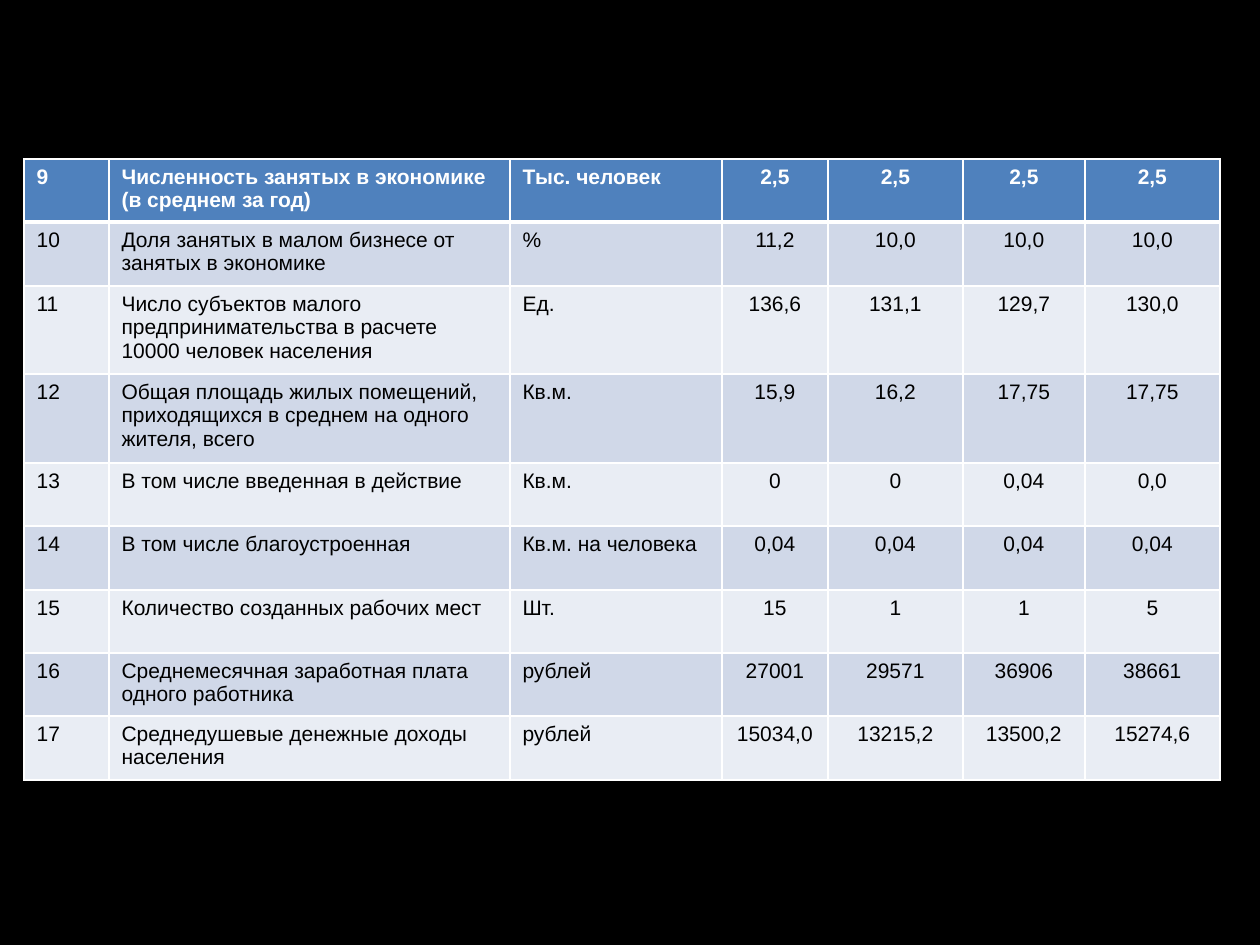
from dataclasses import dataclass

from lxml.etree import SubElement
from pptx import Presentation
from pptx.dml.color import RGBColor
from pptx.enum.text import PP_ALIGN as Align
from pptx.oxml.ns import qn
from pptx.util import Emu, Pt

SCALE = 914400 / 126
COLUMN_WIDTHS = [85, 401, 212, 106, 135, 122, 135]
ROW_HEIGHTS = [63, 64, 88, 89, 63, 64, 63, 63, 64]
FIRST_NUMBER = 9
FIRST_VALUE_COLUMN = 3


@dataclass
class Indicator:
    name: str
    unit: str
    values: tuple[str, ...]


@dataclass
class RowStyle:
    fill: str
    text: str
    bold: bool
    top: int
    bottom: int


INDICATORS = [
    Indicator("Численность занятых в экономике (в среднем за год)", "Тыс. человек",
              ("2,5", "2,5", "2,5", "2,5")),
    Indicator("Доля занятых в малом бизнесе от занятых в экономике", "%",
              ("11,2", "10,0", "10,0", "10,0")),
    Indicator("Число субъектов малого предпринимательства в расчете 10000 человек населения",
              "Ед.", ("136,6", "131,1", "129,7", "130,0")),
    Indicator("Общая площадь жилых помещений, приходящихся в среднем на одного жителя, всего",
              "Кв.м.", ("15,9", "16,2", "17,75", "17,75")),
    Indicator("В том числе введенная в действие", "Кв.м.", ("0", "0", "0,04", "0,0")),
    Indicator("В том числе благоустроенная", "Кв.м. на человека",
              ("0,04", "0,04", "0,04", "0,04")),
    Indicator("Количество созданных рабочих мест", "Шт.", ("15", "1", "1", "5")),
    Indicator("Среднемесячная заработная плата одного работника", "рублей",
              ("27001", "29571", "36906", "38661")),
    Indicator("Среднедушевые денежные доходы населения", "рублей",
              ("15034,0", "13215,2", "13500,2", "15274,6")),
]


def px(length: int) -> Emu:
    return Emu(round(length * SCALE))


def color(value: str) -> RGBColor:
    return RGBColor.from_string(value)


def row_style(row: int) -> RowStyle:
    if row == 0:
        return RowStyle("4F81BD", "FFFFFF", True, 1, 3)
    fill = "D0D8E8" if row % 2 else "E9EDF4"
    return RowStyle(fill, "000000", False, 3 if row == 1 else 1, 1)


def draw_borders(cell, style: RowStyle) -> None:
    properties = cell._tc.get_or_add_tcPr()
    widths = {"lnL": 1, "lnR": 1, "lnT": style.top, "lnB": style.bottom}
    for side, width in widths.items():
        line = SubElement(properties, qn(f"a:{side}"), w=str(Pt(width)))
        solid = SubElement(line, qn("a:solidFill"))
        SubElement(solid, qn("a:srgbClr"), val="FFFFFF")


def draw_cell(cell, text: str, style: RowStyle, alignment: Align) -> None:
    draw_borders(cell, style)
    cell.fill.solid()
    cell.fill.fore_color.rgb = color(style.fill)
    para = cell.text_frame.paragraphs[0]
    para.alignment = alignment
    span = para.add_run()
    span.text = text
    font_format = {"name": "Arial", "size": Pt(12), "bold": style.bold}
    for attribute, value in font_format.items():
        setattr(span.font, attribute, value)
    span.font.color.rgb = color(style.text)


def draw_table(page, indicators: list[Indicator]) -> None:
    frame = page.shapes.add_table(
        len(indicators), len(COLUMN_WIDTHS),
        px(24), px(159), px(sum(COLUMN_WIDTHS)), px(sum(ROW_HEIGHTS)))
    table = frame.table
    for column, width in zip(table.columns, COLUMN_WIDTHS):
        column.width = px(width)
    for row, height in zip(table.rows, ROW_HEIGHTS):
        row.height = px(height)
    for row, indicator in enumerate(indicators):
        texts = (str(FIRST_NUMBER + row), indicator.name, indicator.unit, *indicator.values)
        for column, text in enumerate(texts):
            alignment = Align.CENTER if column >= FIRST_VALUE_COLUMN else Align.LEFT
            draw_cell(table.cell(row, column), text, row_style(row), alignment)


def main() -> None:
    deck = Presentation()
    deck.slide_width, deck.slide_height = px(1260), px(945)
    page = deck.slides.add_slide(deck.slide_layouts[6])
    page.background.fill.solid()
    page.background.fill.fore_color.rgb = color("000000")
    draw_table(page, INDICATORS)
    deck.save("out.pptx")


if __name__ == "__main__":
    main()
